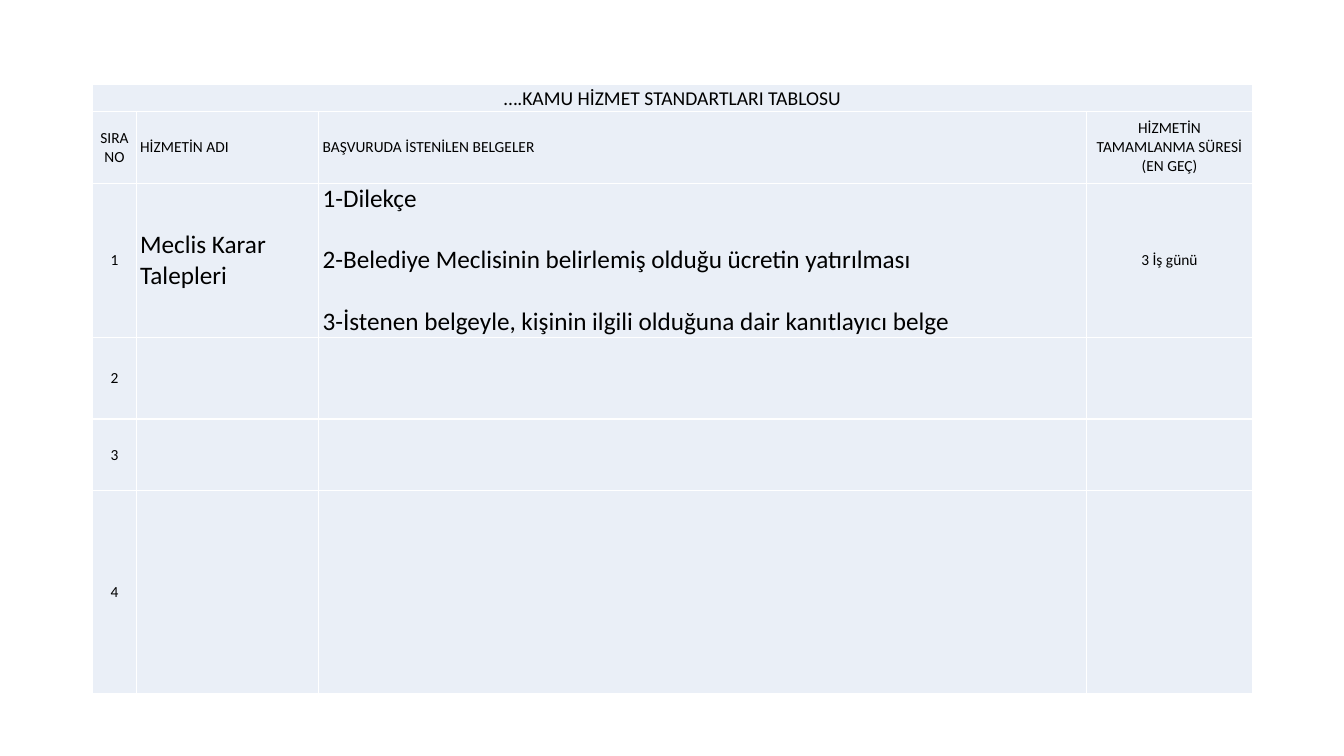
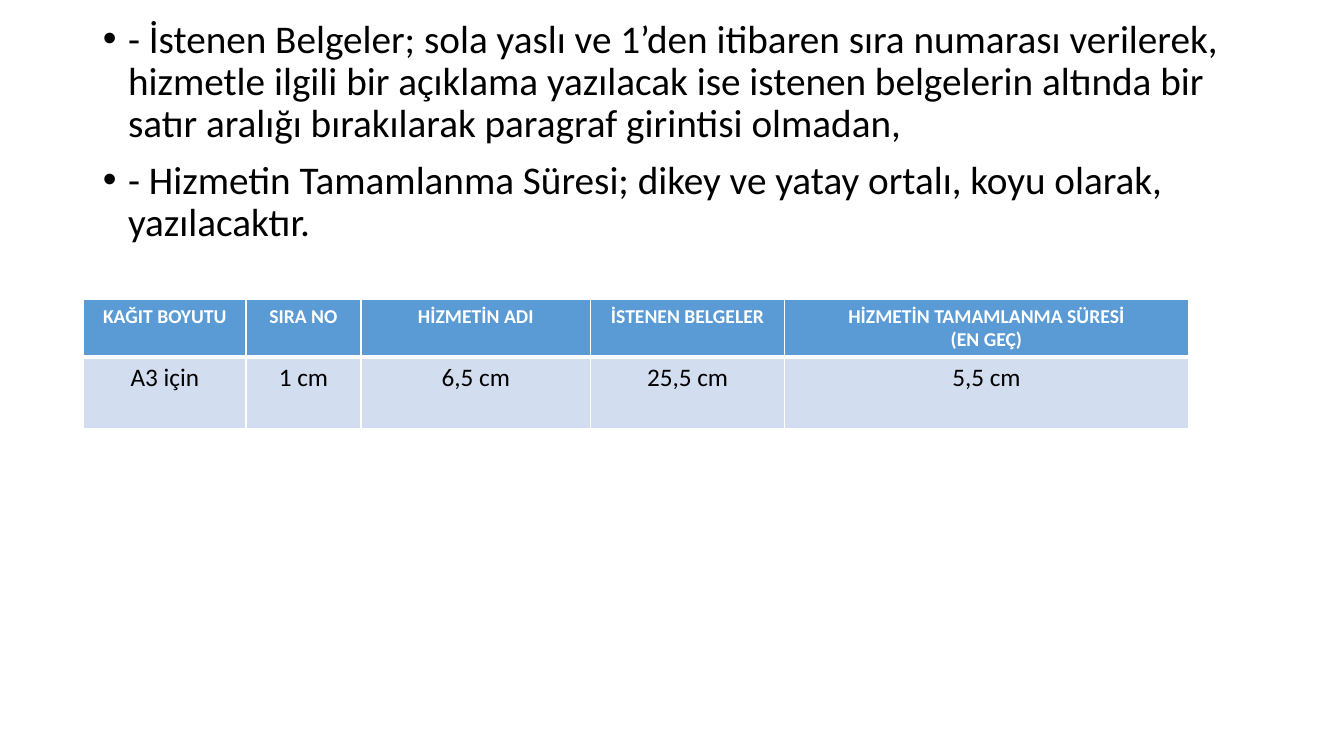
import pptx
import pptx.dml.color
import pptx.enum.text
import pptx.oxml
import pptx.oxml.ns
import pptx.util
from dataclasses import dataclass

Inches, Pt = pptx.util.Inches, pptx.util.Pt
Align, Anchor = pptx.enum.text.PP_ALIGN, pptx.enum.text.MSO_ANCHOR


@dataclass(frozen=True)
class Theme:
    font: str = "Calibri"
    text: str = "000000"
    white: str = "FFFFFF"
    pale: str = "EAEFF7"
    header: str = "5B9BD5"
    band: str = "D2DEEF"
    body: int = 28
    large: int = 18
    heading: int = 14
    small: int = 11


T = Theme()

# Content: a cell is a string, or a list of paragraphs
STANDARDS_TITLE = "….KAMU HİZMET STANDARTLARI TABLOSU"
STANDARDS = [
    [["SIRA", "NO"], "HİZMETİN ADI", "BAŞVURUDA İSTENİLEN BELGELER",
     ["HİZMETİN TAMAMLANMA SÜRESİ", "(EN GEÇ)"]],
    ["1", "Meclis Karar Talepleri",
     ["1-Dilekçe",
      "2-Belediye Meclisinin belirlemiş olduğu ücretin yatırılması",
      "3-İstenen belgeyle, kişinin ilgili olduğuna dair kanıtlayıcı belge"],
     "3 İş günü"],
    ["2", "", "", ""],
    ["3", "", "", ""],
    ["4", "", "", ""],
]
STANDARDS_COLS = [0.43, 1.81, 7.62, 1.64]
STANDARDS_ROWS = [0.27, 0.71, 1.52, 0.81, 0.71, 2.02]

RULES = [
    "- İstenen Belgeler; sola yaslı ve 1’den itibaren sıra numarası verilerek, "
    "hizmetle ilgili bir açıklama yazılacak ise istenen belgelerin altında bir "
    "satır aralığı bırakılarak paragraf girintisi olmadan,",
    "- Hizmetin Tamamlanma Süresi; dikey ve yatay ortalı, koyu olarak, yazılacaktır.",
]
WIDTHS = [
    ["KAĞIT BOYUTU", "SIRA NO", "HİZMETİN ADI", "İSTENEN BELGELER",
     ["HİZMETİN TAMAMLANMA SÜRESİ", "(EN GEÇ)"]],
    ["A3 için", "1 cm", "6,5 cm", "25,5 cm", "5,5 cm"],
]
WIDTHS_COLS = [1.61, 1.14, 2.28, 1.92, 4.01]
WIDTHS_ROWS = [0.56, 0.71]


def rgb(value):
    return pptx.dml.color.RGBColor.from_string(value)


def write(tf, text, size=T.large, color=T.text, bold=False, align=Align.LEFT,
          gap=0, line=None, bullet=False):
    """Write one paragraph per item; gap is the space before each but the first."""
    for i, item in enumerate([text] if isinstance(text, str) else text):
        p = tf.add_paragraph() if i else tf.paragraphs[0]
        p.alignment = align
        p.space_before = Pt(gap if i or bullet else 0)
        if line:
            p.line_spacing = line
        if bullet:
            pPr = p._p.get_or_add_pPr()
            pPr.set("marL", str(Inches(0.25)))
            pPr.set("indent", str(-Inches(0.25)))
            bu = pptx.oxml.parse_xml(
                f'<a:buChar {pptx.oxml.ns.nsdecls("a")} char="•"/>')
            pPr.append(bu)
        r = p.add_run()
        r.text = item
        r.font.name, r.font.size, r.font.bold = T.font, Pt(size), bold
        r.font.color.rgb = rgb(color)


def style_cell(cell, fill, top=1, bottom=1):
    """White borders first, then the fill, as the schema orders them."""
    tcPr = cell._tc.get_or_add_tcPr()
    for side, width in zip("LRTB", (1, 1, top, bottom)):
        tcPr.append(pptx.oxml.parse_xml(
            f'<a:ln{side} {pptx.oxml.ns.nsdecls("a")} w="{Pt(width)}"><a:solidFill>'
            f'<a:srgbClr val="{T.white}"/></a:solidFill></a:ln{side}>'))
    cell.fill.solid()
    cell.fill.fore_color.rgb = rgb(fill)


def add_table(slide, left, top, cols, rows):
    table = slide.shapes.add_table(
        len(rows), len(cols), Inches(left), Inches(top),
        Inches(sum(cols)), Inches(sum(rows))).table
    for column, width in zip(table.columns, cols):
        column.width = Inches(width)
    for row, height in zip(table.rows, rows):
        row.height = Inches(height)
    return table


def standards_slide(prs):
    slide = prs.slides.add_slide(prs.slide_layouts[6])
    table = add_table(slide, 0.92, 0.84, STANDARDS_COLS, STANDARDS_ROWS)
    for cell in table.iter_cells():
        style_cell(cell, T.pale)
        cell.margin_left = cell.margin_right = Inches(0.04)
        cell.margin_top = cell.margin_bottom = 0
        cell.vertical_anchor = Anchor.MIDDLE

    # Title row across all columns
    title = table.cell(0, 0)
    title.merge(table.cell(0, len(STANDARDS_COLS) - 1))
    write(title.text_frame, STANDARDS_TITLE, size=T.heading, align=Align.CENTER)

    # Outer columns are small and centred; the service itself is large
    for i, row in enumerate(STANDARDS, 1):
        for j, text in enumerate(row):
            if not text:
                continue
            inner = j in (1, 2)
            documents = i > 1 and j == 2
            cell = table.cell(i, j)
            if documents:
                cell.vertical_anchor = Anchor.TOP
            write(cell.text_frame, text,
                  size=T.large if inner and i > 1 else T.small,
                  align=Align.LEFT if inner else Align.CENTER,
                  gap=22 if documents else 0)


def rules_slide(prs):
    slide = prs.slides.add_slide(prs.slide_layouts[1])
    title = slide.shapes.title
    title._element.getparent().remove(title._element)

    # Writing rules
    body = slide.placeholders[1]
    body.left, body.top = Inches(0.92), Inches(0.14)
    body.width, body.height = Inches(11.5), Inches(6.61)
    body.text_frame.auto_size = pptx.enum.text.MSO_AUTO_SIZE.NONE
    write(body.text_frame, RULES, size=T.body, gap=10, line=0.9, bullet=True)

    # Column widths
    table = add_table(slide, 0.83, 2.97, WIDTHS_COLS, WIDTHS_ROWS)
    looks = [
        (dict(fill=T.header, bottom=3),
         dict(size=T.heading, color=T.white, bold=True)),
        (dict(fill=T.band, top=3), dict(size=T.large)),
    ]
    for i, (row, (box, font)) in enumerate(zip(WIDTHS, looks)):
        for j, text in enumerate(row):
            cell = table.cell(i, j)
            style_cell(cell, **box)
            write(cell.text_frame, text, align=Align.CENTER, **font)


def main():
    prs = pptx.Presentation()
    prs.slide_width, prs.slide_height = Inches(13.33), Inches(7.5)
    standards_slide(prs)
    rules_slide(prs)
    prs.save("out.pptx")


if __name__ == "__main__":
    main()
